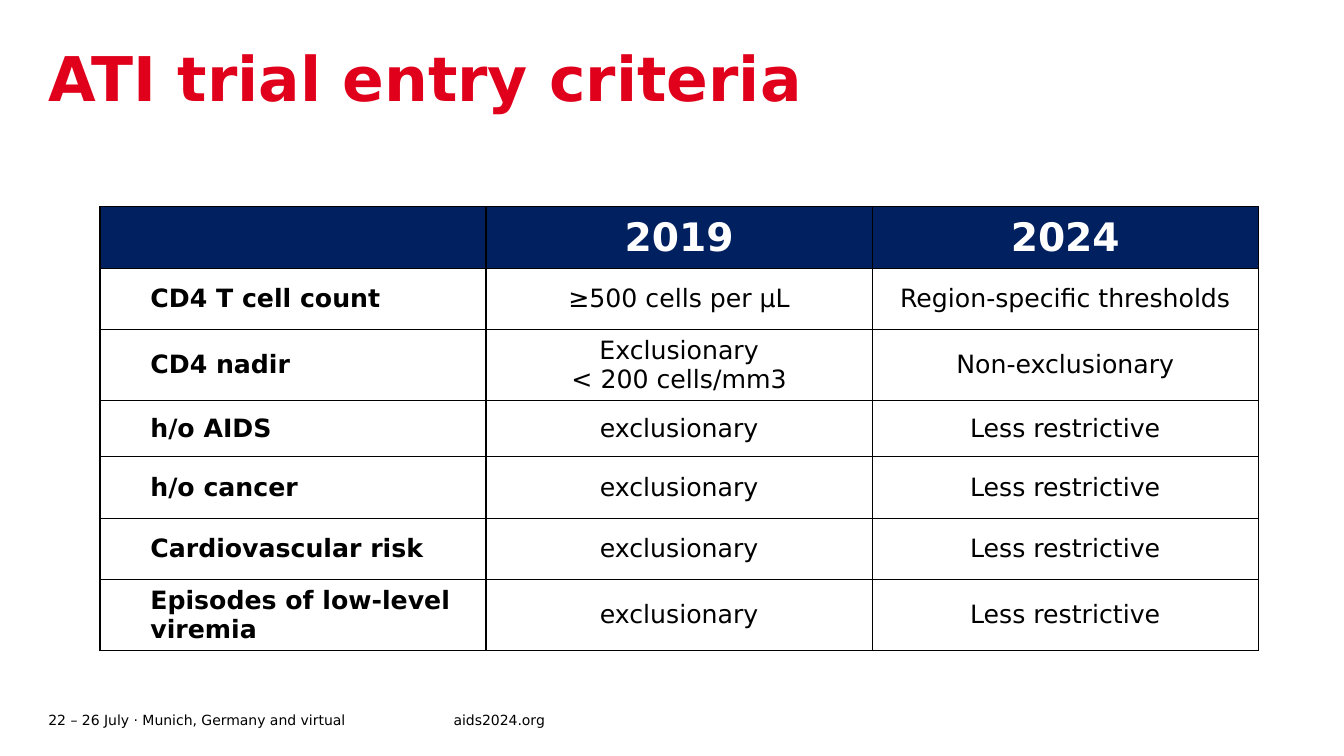
import pptx
import pptx.util
from lxml import etree
from pptx.dml.color import RGBColor
from pptx.enum.text import MSO_ANCHOR, PP_ALIGN
from pptx.oxml.ns import qn
from pptx.util import Cm, Pt

RED = RGBColor(0xE0, 0x00, 0x1B)
NAVY = RGBColor(0x00, 0x20, 0x60)
BLACK = RGBColor(0x00, 0x00, 0x00)
WHITE = RGBColor(0xFF, 0xFF, 0xFF)
FONT = "DejaVu Sans"

CRITERIA = [
    ("", "2019", "2024"),
    ("CD4 T cell count", "≥500 cells per μL", "Region-specific thresholds"),
    ("CD4 nadir", "Exclusionary\n< 200 cells/mm3", "Non-exclusionary"),
    ("h/o AIDS", "exclusionary", "Less restrictive"),
    ("h/o cancer", "exclusionary", "Less restrictive"),
    ("Cardiovascular risk", "exclusionary", "Less restrictive"),
    ("Episodes of low-level viremia", "exclusionary", "Less restrictive"),
]
ROW_HEIGHTS = [1.55, 1.55, 1.55, 1.42, 1.55, 1.55, 1.4]
COLUMN_WIDTH = 9.73


def write_text(text_frame, text, size=18, color=BLACK, bold=False,
               align=PP_ALIGN.LEFT, line_spacing=None):
    text_frame.text = text
    for paragraph in text_frame.paragraphs:
        paragraph.alignment = align
        paragraph.line_spacing = line_spacing
        for run in paragraph.runs:
            run.font.name = FONT
            run.font.size = Pt(size)
            run.font.bold = bold
            run.font.color.rgb = color


def add_borders(cell, color=BLACK, width=1):
    """Draw a solid line on all four sides; call before setting the fill."""
    properties = cell._tc.get_or_add_tcPr()
    for side in ("a:lnL", "a:lnR", "a:lnT", "a:lnB"):
        line = etree.SubElement(properties, qn(side), w=str(Pt(width)))
        fill = etree.SubElement(line, qn("a:solidFill"))
        etree.SubElement(fill, qn("a:srgbClr"), val=str(color))


class CriteriaSlide:
    def __init__(self, presentation):
        self.slide = presentation.slides.add_slide(presentation.slide_layouts[5])

    def place_text(self, shape, box, text, anchor, **text_format):
        shape.left, shape.top, shape.width, shape.height = map(Cm, box)
        frame = shape.text_frame
        frame.margin_left = frame.margin_right = 0
        frame.margin_top = frame.margin_bottom = 0
        frame.word_wrap = True
        frame.vertical_anchor = anchor
        write_text(frame, text, **text_format)

    def add_title(self, text, box):
        self.place_text(self.slide.shapes.title, box, text, MSO_ANCHOR.TOP,
                        size=44, color=RED, bold=True, line_spacing=0.9)

    def add_footer(self, text, box):
        shape = self.slide.shapes.add_textbox(*map(Cm, box))
        self.place_text(shape, box, text, MSO_ANCHOR.MIDDLE, size=10)

    def add_table(self, rows, left, top):
        columns = len(rows[0])
        table = self.slide.shapes.add_table(
            len(rows), columns, Cm(left), Cm(top),
            Cm(columns * COLUMN_WIDTH), Cm(sum(ROW_HEIGHTS))).table
        table.horz_banding = False
        for column in table.columns:
            column.width = Cm(COLUMN_WIDTH)
        for row_index, values in enumerate(rows):
            table.rows[row_index].height = Cm(ROW_HEIGHTS[row_index])
            for column_index, text in enumerate(values):
                self.format_cell(table.cell(row_index, column_index), text,
                                 is_header=row_index == 0,
                                 is_label=column_index == 0)

    def format_cell(self, cell, text, is_header, is_label):
        add_borders(cell)
        cell.vertical_anchor = MSO_ANCHOR.MIDDLE
        if is_label:
            cell.margin_left = Cm(1.27)
        if is_header:
            cell.fill.solid()
            cell.fill.fore_color.rgb = NAVY
        else:
            cell.fill.background()
        write_text(cell.text_frame, text,
                   size=28 if is_header else 18,
                   color=WHITE if is_header else BLACK,
                   bold=is_header or is_label,
                   align=PP_ALIGN.LEFT if is_label else PP_ALIGN.CENTER)


def main():
    presentation = pptx.Presentation()
    presentation.slide_width = Cm(33.87)
    presentation.slide_height = Cm(19.05)
    page = CriteriaSlide(presentation)
    page.add_footer("22 – 26 July · Munich, Germany and virtual",
                    (1.22, 17.83, 10.21, 0.61))
    page.add_footer("aids2024.org", (11.43, 17.83, 4.9, 0.61))
    page.add_title("ATI trial entry criteria", (1.22, 1.22, 24.69, 3.4))
    page.add_table(CRITERIA, 2.52, 5.21)
    presentation.save("out.pptx")


if __name__ == "__main__":
    main()
